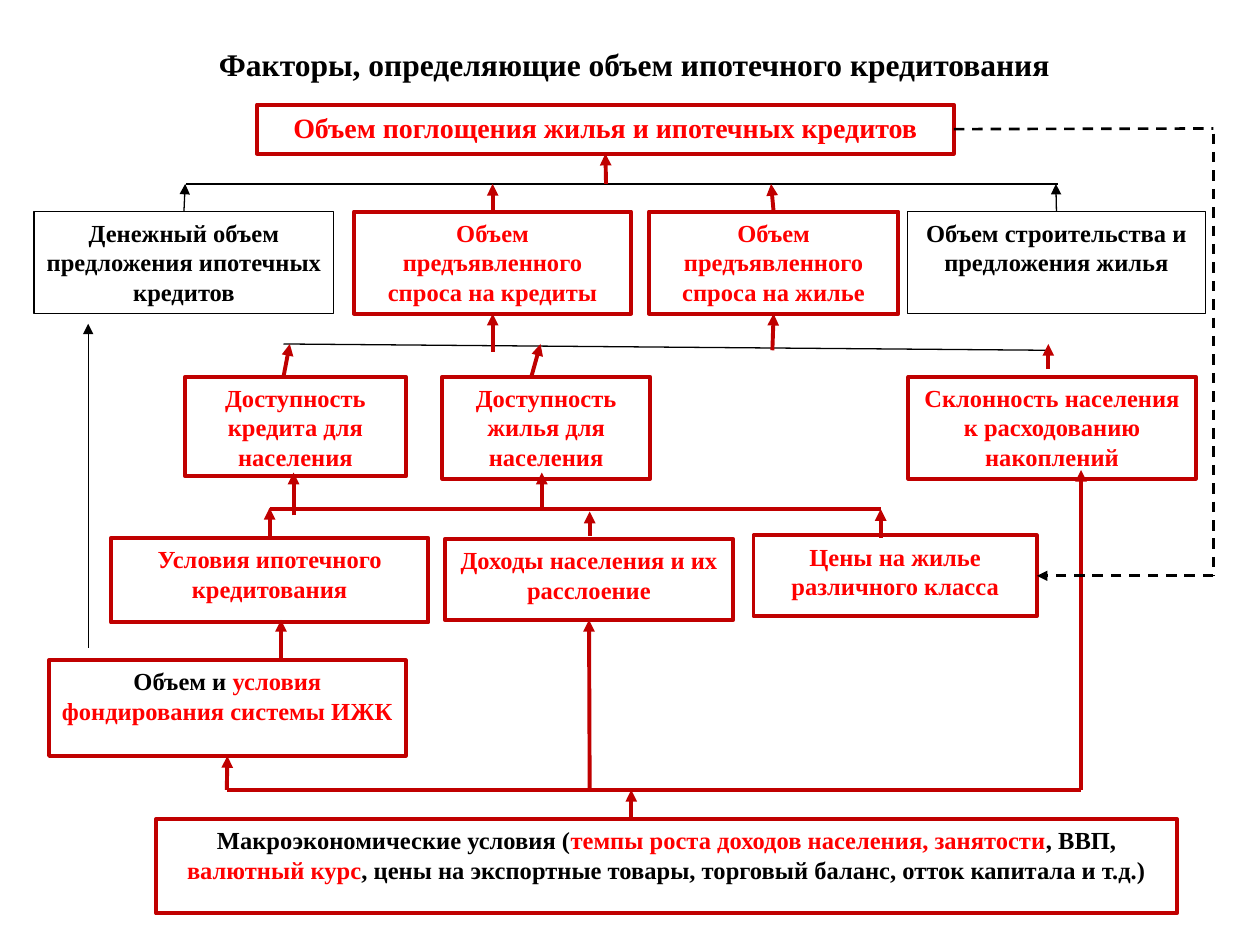
from pptx import Presentation
from pptx.dml.color import RGBColor
from pptx.enum.dml import MSO_LINE
from pptx.enum.shapes import MSO_CONNECTOR, MSO_SHAPE
from pptx.enum.text import MSO_ANCHOR, PP_ALIGN
from pptx.oxml.ns import qn
from pptx.util import Inches, Pt
from lxml.etree import SubElement

BLACK, RED, DARK_RED, WHITE = "000000", "FF0000", "C00000", "FFFFFF"
TOP, LEFT, BOTTOM, RIGHT = range(4)

# name: left, top, width, height, border, text; "|" switches between black and red
BOXES = {
    "absorption": (2.04, 0.83, 5.53, 0.39, DARK_RED, "|Объем поглощения жилья и ипотечных кредитов"),
    "credit supply": (0.27, 1.68, 2.38, 0.81, BLACK, "Денежный объем предложения ипотечных кредитов"),
    "credit demand": (2.81, 1.68, 2.2, 0.81, DARK_RED, "|Объем предъявленного спроса на кредиты"),
    "housing demand": (5.15, 1.68, 1.98, 0.81, DARK_RED, "|Объем предъявленного спроса на жилье"),
    "construction": (7.2, 1.68, 2.37, 0.81, BLACK, "Объем строительства и предложения жилья"),
    "credit access": (1.47, 2.99, 1.75, 0.79, DARK_RED, "|Доступность кредита для населения"),
    "housing access": (3.51, 2.99, 1.65, 0.81, DARK_RED, "|Доступность жилья для населения"),
    "spending": (7.21, 2.99, 2.28, 0.81, DARK_RED, "|Склонность населения к расходованию накоплений"),
    "conditions": (0.88, 4.27, 2.52, 0.67, DARK_RED, "|Условия ипотечного кредитования"),
    "incomes": (3.53, 4.28, 2.29, 0.64, DARK_RED, "|Доходы населения и их расслоение"),
    "prices": (5.98, 4.25, 2.25, 0.64, DARK_RED, "|Цены на жилье различного класса"),
    "funding": (0.39, 5.24, 2.83, 0.76, DARK_RED, "Объем и |условия фондирования системы ИЖК"),
    "macro": (1.24, 6.5, 8.1, 0.75, DARK_RED,
              "Макроэкономические условия (|темпы роста доходов населения, занятости|, ВВП, |валютный курс|"
              ", цены на экспортные товары, торговый баланс, отток капитала и т.д.)"),
}

BUSES = [
    ((1.48, 1.46), (8.4, 1.46), BLACK),
    ((2.25, 2.73), (8.32, 2.78), BLACK),
    ((2.14, 4.04), (6.99, 4.04), DARK_RED),
    ((1.8, 6.27), (8.58, 6.27), DARK_RED),
]

# each end is a point or a box name with its side
ARROWS = [
    ((4.81, 1.46), ("absorption", BOTTOM), DARK_RED),
    (("credit supply", TOP), (1.47, 1.46), BLACK),
    (("credit demand", TOP), (3.91, 1.46), DARK_RED),
    (("housing demand", TOP), (6.12, 1.46), DARK_RED),
    (("construction", TOP), (8.38, 1.46), BLACK),
    ((3.91, 2.79), ("credit demand", BOTTOM), DARK_RED),
    ((6.13, 2.78), ("housing demand", BOTTOM), DARK_RED),
    ((2.25, 2.99), (2.3, 2.73), DARK_RED),
    ((4.22, 2.98), (4.29, 2.73), DARK_RED),
    ((8.32, 2.93), (8.32, 2.73), DARK_RED),
    ((2.33, 4.09), (2.33, 3.75), DARK_RED),
    ((4.3, 4.04), (4.3, 3.75), DARK_RED),
    (("conditions", TOP), (2.14, 4.03), DARK_RED),
    ((4.68, 4.25), (4.68, 4.06), DARK_RED),
    ((6.99, 4.27), (6.99, 4.04), DARK_RED),
    ((2.23, 5.24), (2.23, 4.92), DARK_RED),
    ((0.7, 5.14), (0.7, 2.57), BLACK),
    ((1.8, 6.27), ("funding", BOTTOM), DARK_RED),
    ((4.68, 6.27), ("incomes", BOTTOM), DARK_RED),
    ((8.58, 6.27), (8.58, 3.73), DARK_RED),
    ((5.01, 6.5), (5.01, 6.27), DARK_RED),
]


def rgb(value):
    """Turn a hex string into a colour."""
    return RGBColor.from_string(value)


def write(sp, text, size):
    """Write centred bold text whose parts alternate between black and red."""
    tf = sp.text_frame
    tf.word_wrap = True
    tf.vertical_anchor = MSO_ANCHOR.TOP
    tf.margin_left = tf.margin_right = Inches(0.09)
    tf.margin_top = tf.margin_bottom = Inches(0.05)
    p = tf.paragraphs[0]
    p.alignment = PP_ALIGN.CENTER
    p.font.name, p.font.size, p.font.bold = "Times New Roman", Pt(size), True
    for i, part in enumerate(text.split("|")):
        if part:
            r = p.add_run()
            r.text = part
            r.font.color.rgb = rgb(RED if i % 2 else BLACK)


def add_title(s, text):
    """Place and format the slide title."""
    sp = s.shapes.title
    sp.left, sp.top, sp.width, sp.height = map(Inches, (0.91, 0.31, 8.25, 0.3))
    write(sp, text, 18)


def add_box(s, left, top, width, height, border, text, size):
    """Add a white bordered box with text."""
    sp = s.shapes.add_shape(MSO_SHAPE.RECTANGLE, *map(Inches, (left, top, width, height)))
    sp.shadow.inherit = False
    sp.fill.solid()
    sp.fill.fore_color.rgb = rgb(WHITE)
    sp.line.color.rgb = rgb(border)
    sp.line.width = Pt(0.75 if border == BLACK else 2.25)
    write(sp, text, size)
    return sp


def add_line(s, boxes, start, end, color, arrow=False, dashed=False):
    """Add a straight line between points or box sides."""
    points = [(0, 0) if isinstance(e[0], str) else e for e in (start, end)]
    c = s.shapes.add_connector(MSO_CONNECTOR.STRAIGHT, *[Inches(v) for pt in points for v in pt])
    for e, connect in ((start, c.begin_connect), (end, c.end_connect)):
        if isinstance(e[0], str):
            connect(boxes[e[0]], e[1])
    c.line.color.rgb = rgb(color)
    c.line.width = Pt(1.5 if dashed else 0.75 if color == BLACK else 2.25)
    if dashed:
        c.line.dash_style = MSO_LINE.DASH
    if arrow:
        SubElement(c.line._get_or_add_ln(), qn("a:tailEnd"), type="triangle")
    SubElement(c._element.spPr, qn("a:effectLst"))


def main():
    """Build the slide."""
    prs = Presentation()
    prs.slide_width, prs.slide_height = Inches(10), Inches(7.5)
    s = prs.slides.add_slide(prs.slide_layouts[5])
    add_title(s, "Факторы, определяющие объем ипотечного кредитования")
    boxes = {name: add_box(s, *box, 16 if name == "absorption" else 14) for name, box in BOXES.items()}
    for start, end, color in BUSES:
        add_line(s, boxes, start, end, color)
    for start, end, color in ARROWS:
        add_line(s, boxes, start, end, color, arrow=True)
    add_line(s, boxes, ("absorption", RIGHT), (9.63, 1.02), BLACK, dashed=True)
    add_line(s, boxes, (9.63, 1.06), (9.63, 4.57), BLACK, dashed=True)
    add_line(s, boxes, (9.63, 4.57), ("prices", RIGHT), BLACK, arrow=True, dashed=True)
    prs.save("out.pptx")


if __name__ == "__main__":
    main()
